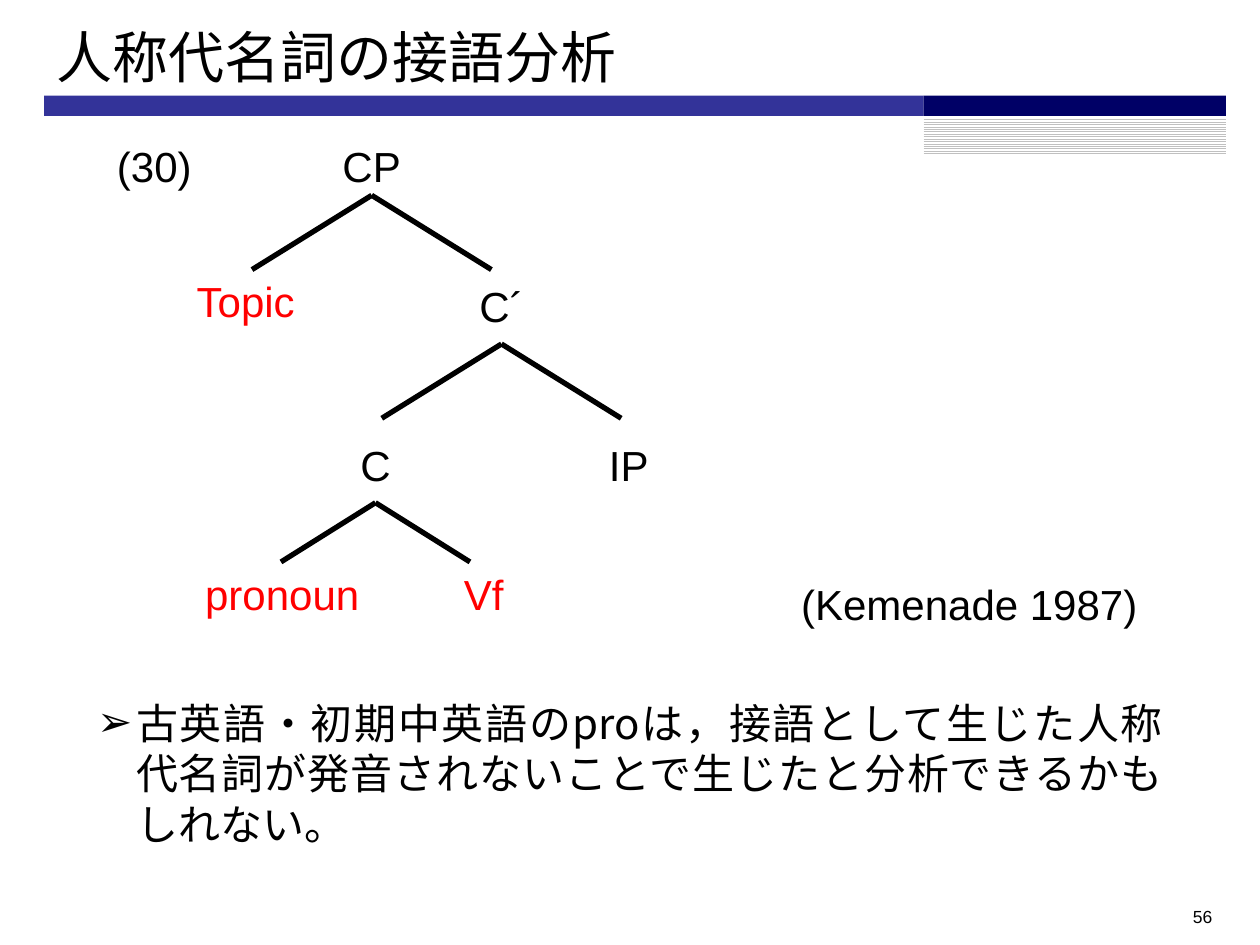
from dataclasses import dataclass

from lxml import etree
from pptx import Presentation
from pptx import util as u
from pptx.dml.color import RGBColor
from pptx.enum import dml, shapes, text
from pptx.oxml import ns
from pptx.util import Inches


@dataclass(frozen=True)
class Theme:
    ink: str = "000000"
    accent: str = "FF0000"
    band: str = "333399"
    band_end: str = "000066"
    hatch: str = "C0C0C0"
    paper: str = "FFFFFF"
    latin: str = "Arial"
    japanese: str = "Noto Sans CJK JP"
    title_size: int = 32
    body_size: int = 24
    number_size: int = 10
    branch_width: int = 3


THEME = Theme()
ALIGN = text.PP_ALIGN
LABEL_WIDTH = 1.5
LABEL_HEIGHT = 0.5


def rgb(value):
    return RGBColor.from_string(value)


def place(shape, left, top, width, height):
    shape.left, shape.top = Inches(left), Inches(top)
    shape.width, shape.height = Inches(width), Inches(height)


def write(shape, content, size=THEME.body_size, color=THEME.ink,
          font=THEME.latin, align=ALIGN.LEFT, anchor=text.MSO_ANCHOR.TOP):
    """Put one formatted paragraph into a shape and return the paragraph."""
    frame = shape.text_frame
    frame.word_wrap = True
    frame.auto_size = text.MSO_AUTO_SIZE.NONE
    frame.vertical_anchor = anchor
    paragraph = frame.paragraphs[0]
    paragraph.alignment = align
    run = paragraph.add_run()
    run.text = content
    run.font.size = u.Pt(size)
    run.font.name = font
    run.font.color.rgb = rgb(color)
    east_asian = etree.SubElement(run._r.get_or_add_rPr(), ns.qn("a:ea"))
    east_asian.set("typeface", font)
    return paragraph


def add_text(slide, content, left, top, width, height=LABEL_HEIGHT, **style):
    box = slide.shapes.add_textbox(0, 0, 0, 0)
    place(box, left, top, width, height)
    write(box, content, **style)


def add_band(slide, left, top, width, height, color, hatched=False):
    band = slide.shapes.add_shape(shapes.MSO_SHAPE.RECTANGLE, 0, 0, 0, 0)
    place(band, left, top, width, height)
    band.shadow.inherit = False
    band.line.fill.background()
    if hatched:
        band.fill.patterned()
        band.fill.pattern = dml.MSO_PATTERN.LIGHT_HORIZONTAL
        band.fill.fore_color.rgb = rgb(color)
        band.fill.back_color.rgb = rgb(THEME.paper)
    else:
        band.fill.solid()
        band.fill.fore_color.rgb = rgb(color)


def add_node(slide, content, center, top, color=THEME.ink):
    add_text(slide, content, center - LABEL_WIDTH / 2, top, LABEL_WIDTH,
             color=color, align=ALIGN.CENTER)


def add_branches(slide, apex, top, reach, drop):
    """Draw the two lines that fall from a node to its daughters."""
    for side in (-1, 1):
        branch = slide.shapes.add_connector(
            shapes.MSO_CONNECTOR.STRAIGHT, Inches(apex), Inches(top),
            Inches(apex + side * reach), Inches(top + drop))
        branch.line.color.rgb = rgb(THEME.ink)
        branch.line.width = u.Pt(THEME.branch_width)
        etree.SubElement(branch._element.spPr, ns.qn("a:effectLst"))


def add_bullet(paragraph, mark, indent):
    properties = paragraph._p.get_or_add_pPr()
    properties.set("marL", str(Inches(indent)))
    properties.set("indent", str(-Inches(indent)))
    etree.SubElement(properties, ns.qn("a:buFont")).set("typeface", THEME.latin)
    etree.SubElement(properties, ns.qn("a:buChar")).set("char", mark)


def add_title(slide, content):
    title = slide.shapes.title
    place(title, 0.35, 0.13, 9.38, 0.63)
    write(title, content, size=THEME.title_size, font=THEME.japanese,
          anchor=text.MSO_ANCHOR.MIDDLE)


def add_conclusion(slide, content):
    body = slide.placeholders[1]
    place(body, 0.67, 5.48, 8.66, 1.31)
    paragraph = write(body, content, font=THEME.japanese, align=ALIGN.JUSTIFY)
    paragraph.line_spacing = u.Pt(29)
    paragraph.space_before = u.Pt(0)
    add_bullet(paragraph, "➢", 0.31)


def add_syntax_tree(slide):
    for apex, top, reach, drop in (
            (2.95, 1.55, 0.95, 0.59),
            (3.98, 2.73, 0.95, 0.59),
            (2.98, 3.99, 0.75, 0.47)):
        add_branches(slide, apex, top, reach, drop)

    for label, center, top, color in (
            ("CP", 2.95, 1.07, THEME.ink),
            ("Topic", 1.95, 2.14, THEME.accent),
            ("C´", 3.98, 2.18, THEME.ink),
            ("C", 2.98, 3.44, THEME.ink),
            ("IP", 4.99, 3.44, THEME.ink),
            ("pronoun", 2.24, 4.46, THEME.accent),
            ("Vf", 3.84, 4.46, THEME.accent)):
        add_node(slide, label, center, top, color)


def main():
    deck = Presentation()
    deck.slide_width, deck.slide_height = Inches(10), Inches(7.5)
    slide = deck.slides.add_slide(deck.slide_layouts[1])

    # Title and the bands beneath it
    add_title(slide, "人称代名詞の接語分析")
    add_band(slide, 0.35, 0.76, 6.98, 0.16, THEME.band)
    add_band(slide, 7.33, 0.93, 2.4, 0.3, THEME.hatch, hatched=True)
    add_band(slide, 7.33, 0.76, 2.4, 0.16, THEME.band_end)

    # Numbered example with its tree and citation
    add_text(slide, "(30)", 0.83, 1.07, 0.95)
    add_syntax_tree(slide)
    add_text(slide, "(Kemenade 1987)", 6.26, 4.54, 2.99)

    # Conclusion and page number
    add_conclusion(slide, "古英語・初期中英語のproは，接語として生じた人称代名詞が"
                          "発音されないことで生じたと分析できるかもしれない。")
    add_text(slide, "56", 7.39, 7.14, 2.33, 0.29,
             size=THEME.number_size, align=ALIGN.RIGHT)

    deck.save("out.pptx")


if __name__ == "__main__":
    main()
